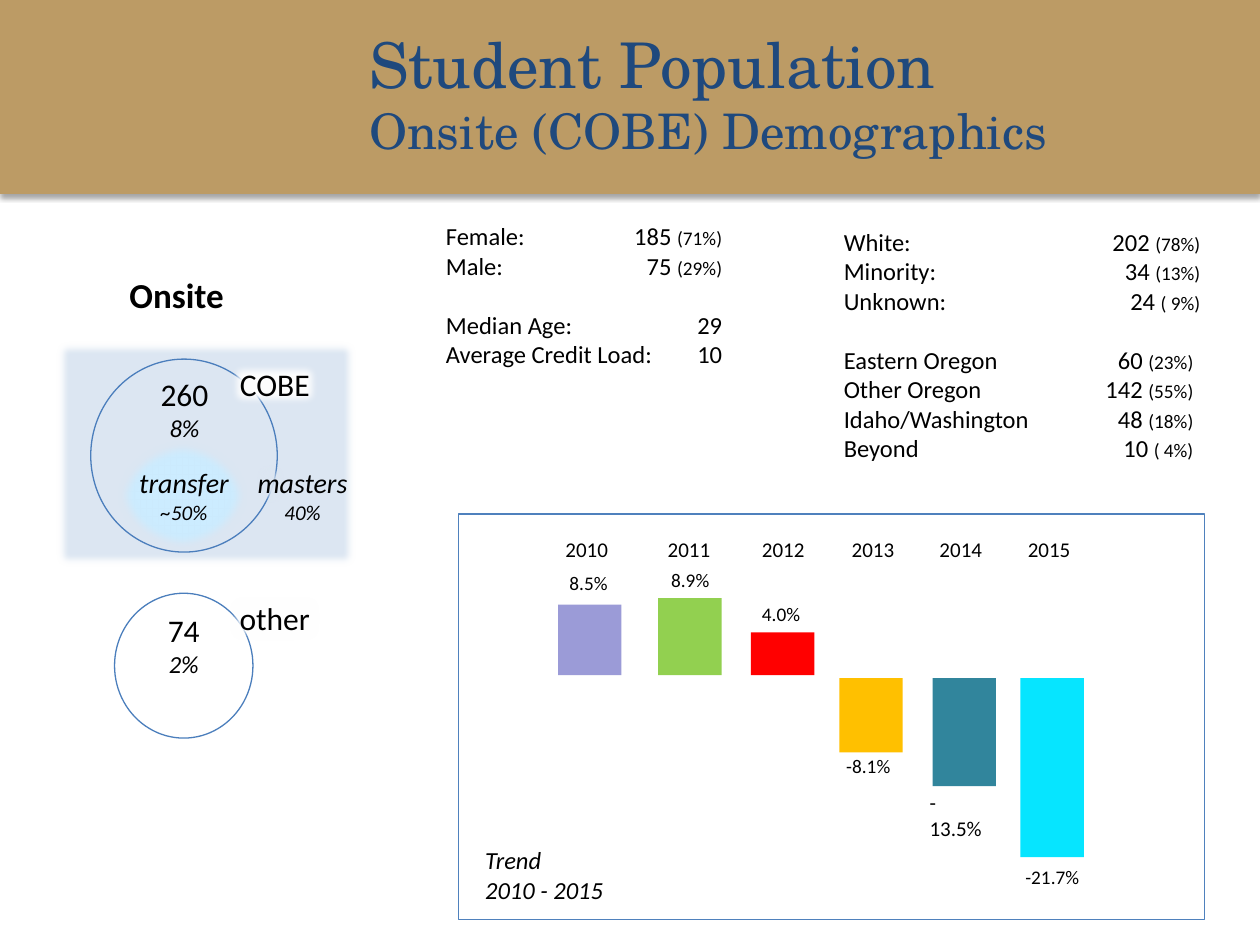
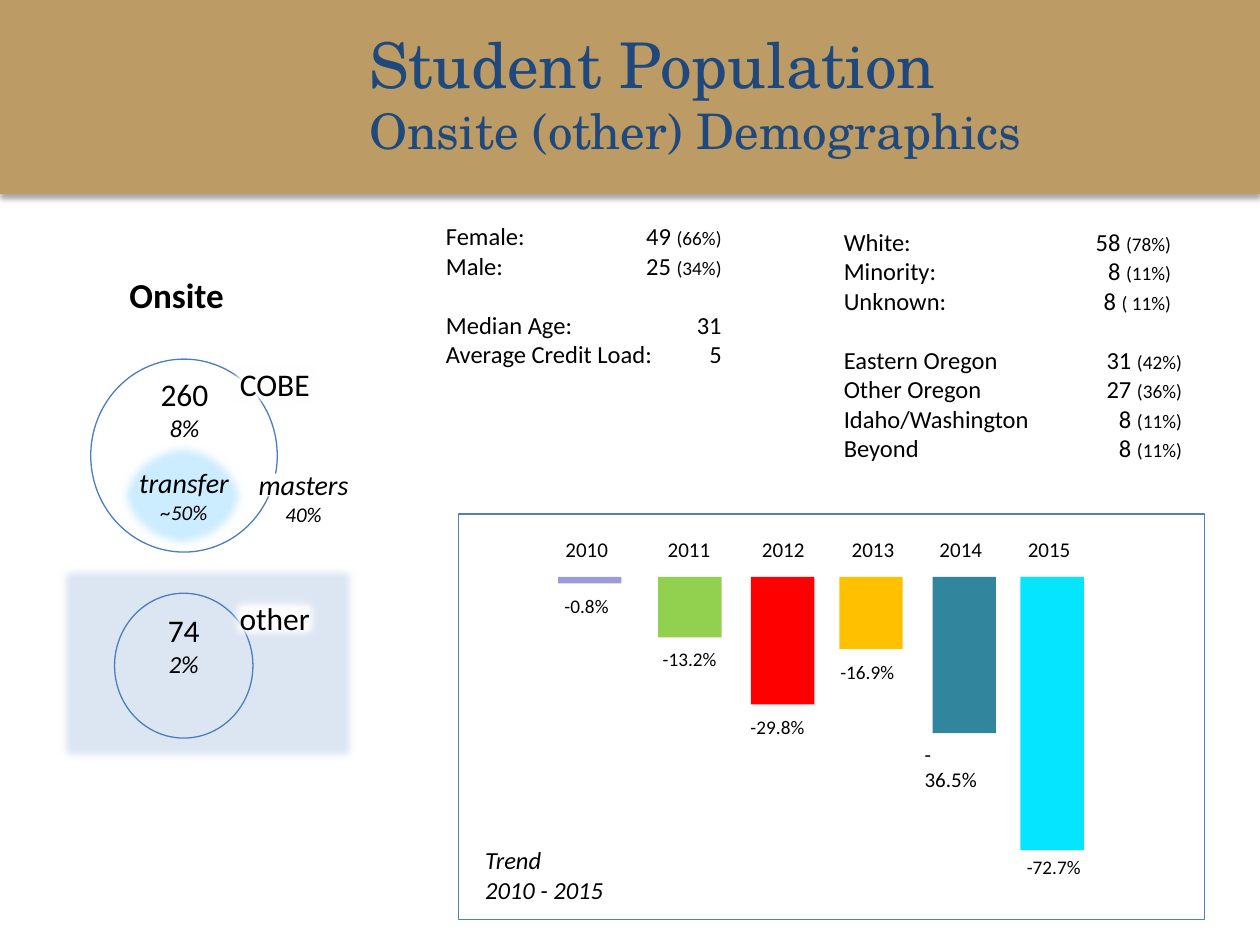
from dataclasses import dataclass
from lxml.etree import SubElement
from pptx import Presentation
from pptx.dml.color import RGBColor
from pptx.enum.shapes import MSO_SHAPE
from pptx.enum.text import MSO_ANCHOR, PP_ALIGN, MSO_AUTO_SIZE
from pptx.oxml.ns import qn
from pptx.util import Cm, Pt


@dataclass(frozen=True)
class Theme:
    gold: str = "BC9B65"
    navy: str = "1F497D"
    black: str = "000000"
    white: str = "FFFFFF"
    highlight: str = "DCE6F2"
    outline: str = "4B7EBC"
    panel_outline: str = "4F81BD"
    transfer: str = "CCECFF"
    title_font: str = "TeX Gyre Schola"
    body_font: str = "Calibri"
    title: int = 36
    subtitle: int = 28
    heading: int = 20
    count: int = 18
    group: int = 16
    body: int = 14
    year: int = 12
    detail: int = 11
    soft_edge: float = 5
    group_gap: int = 17


THEME = Theme()

YEARS = [
    ("2010", 11.15, 11.25, "9B9BD7"),
    ("2011", 13.21, 13.27, "92D050"),
    ("2012", 15.11, 15.14, "FF0000"),
    ("2013", 16.92, 16.92, "FFC000"),
    ("2014", 18.69, 18.8, "31859C"),
    ("2015", 20.47, 20.57, "06E5FF"),
]
BAR_WIDTH = 1.28

SLIDES = [
    {
        "subtitle": "Onsite (COBE) Demographics",
        "highlight": (1.07, 6.83, 6.15, 4.65),
        "masters": (4.93, 9.27),
        "masters_patch": (5.11, 9.3, 0.69, 0.91),
        "patch_color": THEME.highlight,
        "patch_soft": THEME.soft_edge,
        "profile": [
            (5.57, [("Female:", "185", "(71%)"), ("Male:", "75", "(29%)")]),
            (5.57, [("Median Age:", "29", ""), ("Average Credit Load:", "10", "")]),
        ],
        "origin": [
            (7.19, [("White:", "202", "(78%)"), ("Minority:", "34", "(13%)"),
                    ("Unknown:", "24", "( 9%)")]),
            (7.05, [("Eastern Oregon", "60", "(23%)"), ("Other Oregon", "142", "(55%)"),
                    ("Idaho/Washington", "48", "(18%)"), ("Beyond", "10", "( 4%)")]),
        ],
        "axis": (13.61, 13.67),
        "trend": [
            ("8.5%", 1.42, 11.23, 11.4),
            ("8.9%", 1.55, 13.28, 11.33),
            ("4.0%", 0.86, 15.11, 12.01),
            ("-8.1%", 1.5, 16.81, 15.09),
            ("- 13.5%", 2.18, 18.49, 15.8),
            ("-21.7%", 3.61, 20.42, 17.32),
        ],
    },
    {
        "subtitle": "Onsite (other) Demographics",
        "highlight": (1.12, 11.33, 6.15, 4.11),
        "masters": (4.95, 9.3),
        "masters_patch": (5, 9.55, 2.26, 0.46),
        "patch_color": THEME.white,
        "patch_soft": 0,
        "profile": [
            (5.56, [("Female:", "49", "(66%)"), ("Male:", "25", "(34%)")]),
            (5.56, [("Median Age:", "31", ""), ("Average Credit Load:", "5", "")]),
        ],
        "origin": [
            (6.6, [("White:", "58", "(78%)"), ("Minority:", "8", "(11%)"),
                   ("Unknown:", "8", "( 11%)")]),
            (6.82, [("Eastern Oregon", "31", "(42%)"), ("Other Oregon", "27", "(36%)"),
                    ("Idaho/Washington", "8", "(11%)"), ("Beyond", "8", "(11%)")]),
        ],
        "axis": (11.63, 11.63),
        "trend": [
            ("-0.8%", 0.13, 11.13, 11.86),
            ("-13.2%", 1.22, 13.11, 12.93),
            ("-29.8%", 2.57, 14.88, 14.3),
            ("-16.9%", 1.45, 16.69, 13.18),
            ("- 36.5%", 3.15, 18.39, 14.83),
            ("-72.7%", 5.51, 20.45, 17.12),
        ],
    },
]


def add_effect(shape, tag, **attributes):
    effects = shape._element.spPr.find(qn("a:effectLst"))
    return SubElement(effects, qn(tag), {key: str(value) for key, value in attributes.items()})


def add_figure(page, area, kind=MSO_SHAPE.RECTANGLE, fill=None, line=None, soft=0):
    figure = page.shapes.add_shape(kind, *map(Cm, area))
    figure.shadow.inherit = False
    if fill:
        figure.fill.solid()
        figure.fill.fore_color.rgb = RGBColor.from_string(fill)
    else:
        figure.fill.background()
    if line:
        figure.line.color.rgb = RGBColor.from_string(line)
        figure.line.width = Pt(0.75)
    else:
        figure.line.fill.background()
    if soft:
        add_effect(figure, "a:softEdge", rad=Pt(soft))
    return figure


def add_span(para, text, size, font=THEME.body_font, color=THEME.black, bold=False, italic=False):
    span = para.add_run()
    span.text = text
    span.font.size = Pt(size)
    span.font.name = font
    span.font.color.rgb = RGBColor.from_string(color)
    span.font.bold = bold
    span.font.italic = italic


def add_text(page, area, lines, wrap=False, align=PP_ALIGN.LEFT, anchor=MSO_ANCHOR.TOP, **style):
    box = page.shapes.add_textbox(*map(Cm, area))
    frame = box.text_frame
    frame.word_wrap = wrap
    frame.auto_size = MSO_AUTO_SIZE.NONE if wrap else MSO_AUTO_SIZE.SHAPE_TO_FIT_TEXT
    frame.vertical_anchor = anchor
    for index, (text, size, *slant) in enumerate(lines):
        para = frame.paragraphs[0] if index == 0 else frame.add_paragraph()
        para.alignment = align
        add_span(para, text, size, **{"italic": bool(slant), **style})
    return box


def add_statistics(page, area, groups):
    frame = page.shapes.add_textbox(*map(Cm, area)).text_frame
    frame.word_wrap = True
    first = True
    for tab, rows in groups:
        for index, (label, number, percent) in enumerate(rows):
            para = frame.paragraphs[0] if first else frame.add_paragraph()
            if index == 0 and not first:
                para.space_before = Pt(THEME.group_gap)
            first = False
            tabs = SubElement(para._p.get_or_add_pPr(), qn("a:tabLst"))
            SubElement(tabs, qn("a:tab"), {"pos": str(Cm(tab)), "algn": "r"})
            add_span(para, f"{label}\t{number}" + (" " if percent else ""), THEME.body)
            if percent:
                add_span(para, percent, THEME.detail)


def add_header(page, subtitle):
    band = add_figure(page, (0, -0.03, 25.4, 3.94), fill=THEME.gold)
    shadow = add_effect(band, "a:outerShdw", blurRad=Pt(3.1), dist=Pt(1.8), dir=5400000,
                        algn="t", rotWithShape=0)
    shade = SubElement(shadow, qn("a:srgbClr"), {"val": THEME.black})
    SubElement(shade, qn("a:alpha"), {"val": "35000"})
    add_text(page, (7.19, 0.41, 17.58, 2.9),
             [("Student Population", THEME.title), (subtitle, THEME.subtitle)],
             wrap=True, anchor=MSO_ANCHOR.MIDDLE, font=THEME.title_font, color=THEME.navy)


def add_populations(page, content):
    center = PP_ALIGN.CENTER
    add_figure(page, content["highlight"], fill=THEME.highlight, soft=THEME.soft_edge)
    add_text(page, (2.36, 5.38, 2.44, 1.12), [("Onsite", THEME.heading)], bold=True)
    populations = [
        ("COBE", "260", "8%", (1.83, 7.24, 3.76, 3.89), (2.97, 7.44, 1.5, 1.63)),
        ("other", "74", "2%", (2.31, 11.96, 2.79, 2.92), (3.12, 12.19, 1.17, 1.63)),
    ]
    for name, count, share, circle, count_area in populations:
        add_figure(page, circle, MSO_SHAPE.OVAL, line=THEME.outline)
        name_area = (4.57, circle[1], 1.94, 1.02)
        add_figure(page, name_area, fill=THEME.white, soft=THEME.soft_edge)
        add_text(page, name_area, [(name, THEME.count)], align=center)
        add_text(page, count_area, [(count, THEME.count), (share, THEME.body, "italic")],
                 align=center)
    add_figure(page, (2.36, 8.89, 2.64, 2.21), MSO_SHAPE.OVAL, fill=THEME.transfer,
               soft=THEME.soft_edge)
    add_figure(page, content["masters_patch"], fill=content["patch_color"],
               soft=content["patch_soft"])
    for name, share, place in [("transfer", "~50%", (2.54, 9.27)),
                               ("masters", "40%", content["masters"])]:
        add_text(page, (*place, 2.34, 1.45), [(name, THEME.group), (share, THEME.year)],
                 align=center, italic=True)


def add_trend(page, content):
    add_figure(page, (9.25, 10.36, 15.04, 8.18), fill=THEME.white, line=THEME.panel_outline)
    rise_base, fall_base = content["axis"]
    for (year, year_left, bar_left, color), (change, height, left, top) in zip(
            YEARS, content["trend"]):
        bar_top = fall_base if change.startswith("-") else rise_base - height
        size = THEME.year if change.startswith("- ") else THEME.detail
        add_text(page, (year_left, 10.69, 1.4, 0.76), [(year, THEME.year)])
        add_figure(page, (bar_left, bar_top, BAR_WIDTH, height), fill=color)
        add_text(page, (left, top, 1.6, 0.74), [(change, size)])
    add_text(page, (9.53, 16.92, 2.92, 1.45),
             [("Trend", THEME.body), ("2010 - 2015", THEME.body)], italic=True)


def main():
    deck = Presentation()
    deck.slide_width, deck.slide_height = Cm(25.4), Cm(19.05)
    for content in SLIDES:
        page = deck.slides.add_slide(deck.slide_layouts[6])
        add_header(page, content["subtitle"])
        add_populations(page, content)
        add_statistics(page, (8.74, 4.34, 6.63, 3.25), content["profile"])
        add_statistics(page, (16.76, 4.45, 7.82, 5.51), content["origin"])
        add_trend(page, content)
    deck.save("out.pptx")


if __name__ == "__main__":
    main()
